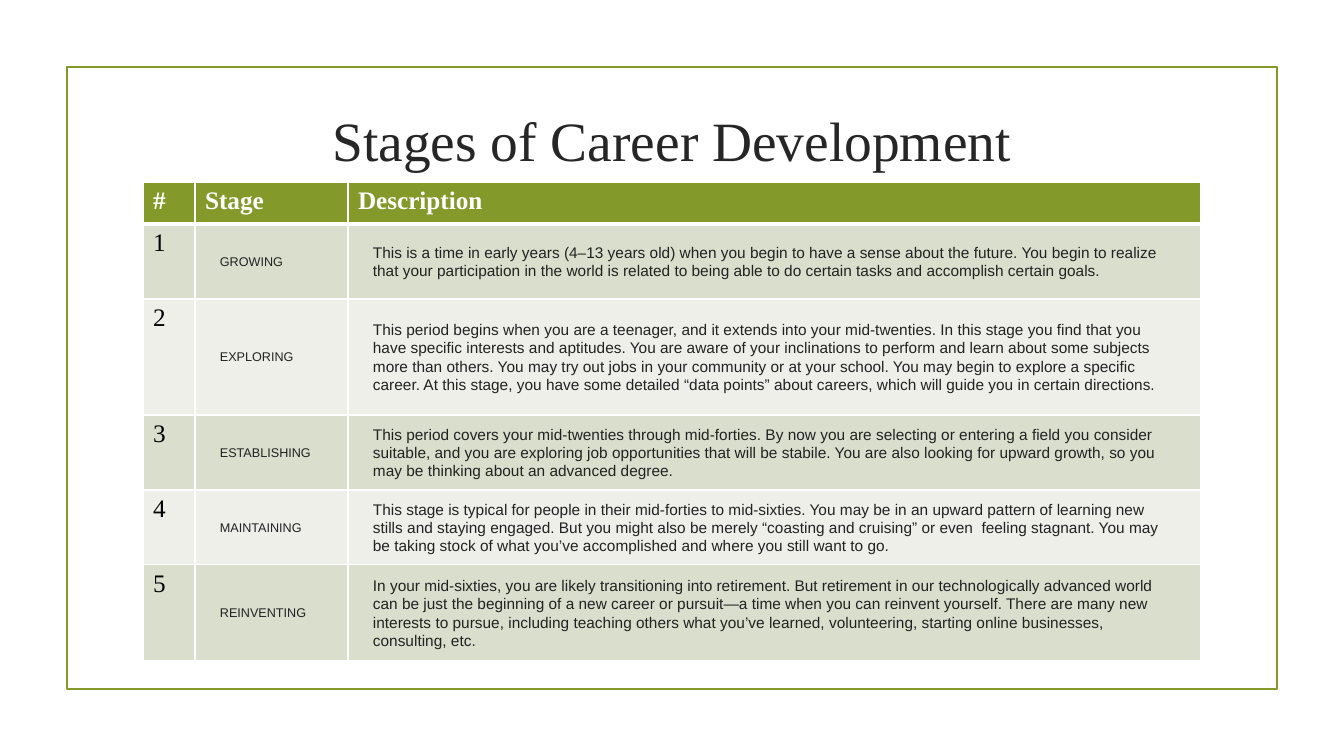
from dataclasses import dataclass

from lxml.etree import SubElement
from pptx import Presentation
from pptx.dml.color import RGBColor
from pptx.enum.shapes import MSO_SHAPE as Shape
from pptx.enum.text import MSO_ANCHOR as Anchor, PP_ALIGN as Align
from pptx.oxml.ns import qn
from pptx.slide import Slide
from pptx.table import _Cell as Cell
from pptx.text.text import TextFrame
from pptx.util import Emu, Pt

EMU_PER_PX = 914400 / 100.8
COLORS = {
    "green": "83992A",
    "title": "262626",
    "body": "222222",
    "black": "000000",
    "white": "FFFFFF",
    "odd_row": "D9DECD",
    "even_row": "EDEFE8",
}
SERIF = "Times New Roman"
SANS = "Arial"
HEADINGS = ("#", "Stage", "Description")
COLUMN_WIDTHS = (52, 153, 853)
HEADER_HEIGHT = 42


@dataclass(frozen=True)
class Stage:
    name: str
    description: str
    height: int


@dataclass(frozen=True)
class TextStyle:
    font: str
    size: float
    color: str
    bold: bool = False


TITLE = TextStyle(SERIF, 39.6, "title")
HEADING = TextStyle(SERIF, 18, "white", True)
NUMBER = TextStyle(SERIF, 18, "black")
NAME = TextStyle(SANS, 9, "body")
DESCRIPTION = TextStyle(SANS, 11, "body")

STAGES = (
    Stage(
        "GROWING",
        "This is a time in early years (4–13 years old) when you begin to have a sense "
        "about the future. You begin to realize that your participation in the world is "
        "related to being able to do certain tasks and accomplish certain goals.",
        75,
    ),
    Stage(
        "EXPLORING",
        "This period begins when you are a teenager, and it extends into your "
        "mid-twenties. In this stage you find that you have specific interests and "
        "aptitudes. You are aware of your inclinations to perform and learn about some "
        "subjects more than others. You may try out jobs in your community or at your "
        "school. You may begin to explore a specific career. At this stage, you have some "
        "detailed “data points” about careers, which will guide you in certain directions.",
        116,
    ),
    Stage(
        "ESTABLISHING",
        "This period covers your mid-twenties through mid-forties. By now you are "
        "selecting or entering a field you consider suitable, and you are exploring job "
        "opportunities that will be stabile. You are also looking for upward growth, so "
        "you may be thinking about an advanced degree.",
        75,
    ),
    Stage(
        "MAINTAINING",
        "This stage is typical for people in their mid-forties to mid-sixties. You may be "
        "in an upward pattern of learning new stills and staying engaged. But you might "
        "also be merely “coasting and cruising” or even  feeling stagnant. You may be "
        "taking stock of what you’ve accomplished and where you still want to go.",
        75,
    ),
    Stage(
        "REINVENTING",
        "In your mid-sixties, you are likely transitioning into retirement. But retirement "
        "in our technologically advanced world can be just the beginning of a new career "
        "or pursuit—a time when you can reinvent yourself. There are many new interests to "
        "pursue, including teaching others what you’ve learned, volunteering, starting "
        "online businesses, consulting, etc.",
        96,
    ),
)


def px(length: int) -> Emu:
    return Emu(round(length * EMU_PER_PX))


def rgb(color: str) -> RGBColor:
    return RGBColor.from_string(COLORS[color])


def write(text_frame: TextFrame, text: str, style: TextStyle) -> None:
    text_frame.text = text
    font = text_frame.paragraphs[0].runs[0].font
    font.name = style.font
    font.size = Pt(style.size)
    font.bold = style.bold
    font.color.rgb = rgb(style.color)


def set_borders(cell: Cell, top: int, bottom: int) -> None:
    properties = cell._tc.get_or_add_tcPr()
    sides = (("a:lnL", 1), ("a:lnR", 1), ("a:lnT", top), ("a:lnB", bottom))
    for position, (side, width) in enumerate(sides):
        line = SubElement(properties, qn(side), w=str(Pt(width)))
        fill = SubElement(line, qn("a:solidFill"))
        SubElement(fill, qn("a:srgbClr"), val=COLORS["white"])
        properties.insert(position, line)


def fill_cell(cell: Cell, text: str, style: TextStyle, color: str) -> None:
    cell.fill.solid()
    cell.fill.fore_color.rgb = rgb(color)
    write(cell.text_frame, text, style)


def indent_cell(cell: Cell) -> None:
    cell.vertical_anchor = Anchor.MIDDLE
    cell.margin_left = cell.margin_right = px(25)
    cell.margin_top = cell.margin_bottom = px(6)
    cell.text_frame.paragraphs[0].line_spacing = 1.07


def draw_frame(slide: Slide) -> None:
    frame = slide.shapes.add_shape(Shape.RECTANGLE, px(67), px(67), px(1210), px(622))
    frame.shadow.inherit = False
    frame.fill.background()
    frame.line.color.rgb = rgb("green")
    frame.line.width = Pt(1.25)


def draw_title(slide: Slide) -> None:
    title = slide.shapes.add_textbox(px(143), px(108), px(1058), px(63))
    title.text_frame.word_wrap = True
    title.text_frame.vertical_anchor = Anchor.MIDDLE
    write(title.text_frame, "Stages of Career Development", TITLE)
    title.text_frame.paragraphs[0].alignment = Align.CENTER


def draw_table(slide: Slide) -> None:
    heights = [HEADER_HEIGHT] + [stage.height for stage in STAGES]
    table = slide.shapes.add_table(
        len(heights), len(HEADINGS), px(143), px(182),
        px(sum(COLUMN_WIDTHS)), px(sum(heights)),
    ).table
    table.horz_banding = False
    for column, width in zip(table.columns, COLUMN_WIDTHS):
        column.width = px(width)
    for row, height in zip(table.rows, heights):
        row.height = px(height)

    for column, heading in enumerate(HEADINGS):
        fill_cell(table.cell(0, column), heading, HEADING, "green")
        set_borders(table.cell(0, column), 1, 3)

    styles = (NUMBER, NAME, DESCRIPTION)
    for number, stage in enumerate(STAGES, start=1):
        color = "odd_row" if number % 2 else "even_row"
        texts = (str(number), stage.name, stage.description)
        for column, (text, style) in enumerate(zip(texts, styles)):
            cell = table.cell(number, column)
            fill_cell(cell, text, style, color)
            set_borders(cell, 3 if number == 1 else 1, 1)
            if column > 0:
                indent_cell(cell)


def main() -> None:
    presentation = Presentation()
    presentation.slide_width = px(1344)
    presentation.slide_height = px(756)
    slide = presentation.slides.add_slide(presentation.slide_layouts[6])
    draw_frame(slide)
    draw_title(slide)
    draw_table(slide)
    presentation.save("out.pptx")


if __name__ == "__main__":
    main()
